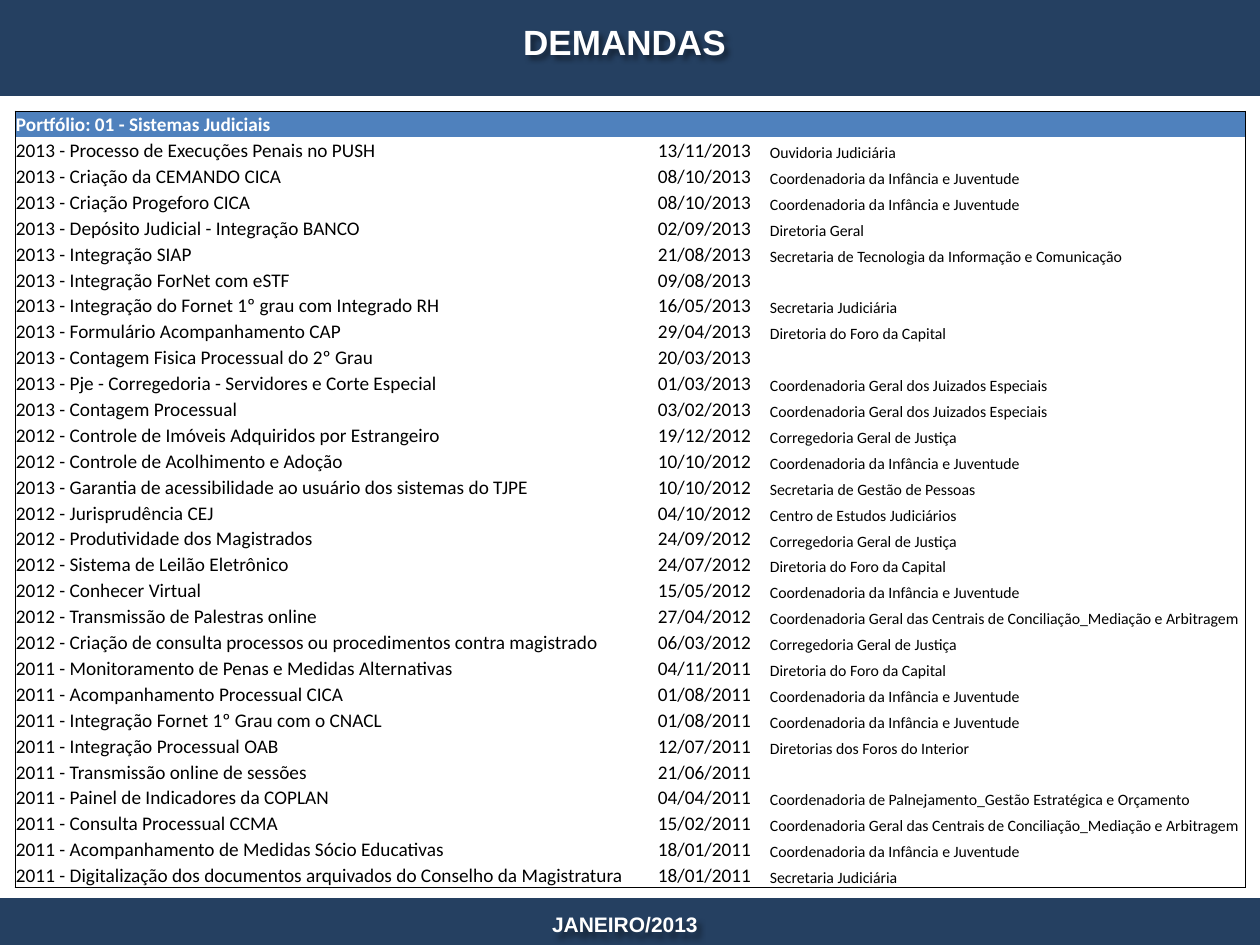
"""Build the DEMANDAS slide: a bordered table of judicial system requests."""
from lxml.etree import SubElement
from pptx import Presentation
from pptx.dml.color import RGBColor
from pptx.enum.shapes import MSO_SHAPE
from pptx.enum.text import MSO_ANCHOR, PP_ALIGN
from pptx.oxml import parse_xml
from pptx.oxml.ns import nsdecls, qn
from pptx.util import Pt

HEX = {"navy": "254061", "blue": "4F81BD", "white": "FFFFFF", "black": "000000"}
INF = "Coordenadoria da Infância e Juventude"
FORO = "Diretoria do Foro da Capital"
JUIZ = "Coordenadoria Geral dos Juizados Especiais"
CORR = "Corregedoria Geral de Justiça"
ARB = "Coordenadoria Geral das Centrais de Conciliação_Mediação e Arbitragem"
SEC = "Secretaria Judiciária"
ROWS = [
    ("Portfólio: 01 - Sistemas Judiciais", "", ""),
    ("2013 - Processo de Execuções Penais no PUSH", "13/11/2013", "Ouvidoria Judiciária"),
    ("2013 - Criação da CEMANDO CICA", "08/10/2013", INF),
    ("2013 - Criação Progeforo CICA", "08/10/2013", INF),
    ("2013 - Depósito Judicial - Integração BANCO", "02/09/2013", "Diretoria Geral"),
    ("2013 - Integração SIAP", "21/08/2013",
     "Secretaria de Tecnologia da Informação e Comunicação"),
    ("2013 - Integração ForNet com eSTF", "09/08/2013", ""),
    ("2013 - Integração do Fornet 1º grau com Integrado RH", "16/05/2013", SEC),
    ("2013 - Formulário Acompanhamento CAP", "29/04/2013", FORO),
    ("2013 - Contagem Fisica Processual do 2º Grau", "20/03/2013", ""),
    ("2013 - Pje - Corregedoria - Servidores e Corte Especial", "01/03/2013", JUIZ),
    ("2013 - Contagem Processual", "03/02/2013", JUIZ),
    ("2012 - Controle de Imóveis Adquiridos por Estrangeiro", "19/12/2012", CORR),
    ("2012 - Controle de Acolhimento e Adoção", "10/10/2012", INF),
    ("2013 - Garantia de acessibilidade ao usuário dos sistemas do TJPE", "10/10/2012",
     "Secretaria de Gestão de Pessoas"),
    ("2012 - Jurisprudência CEJ", "04/10/2012", "Centro de Estudos Judiciários"),
    ("2012 - Produtividade dos Magistrados", "24/09/2012", CORR),
    ("2012 - Sistema de Leilão Eletrônico", "24/07/2012", FORO),
    ("2012 - Conhecer Virtual", "15/05/2012", INF),
    ("2012 - Transmissão de Palestras online", "27/04/2012", ARB),
    ("2012 - Criação de consulta processos ou procedimentos contra magistrado",
     "06/03/2012", CORR),
    ("2011 - Monitoramento de Penas e Medidas Alternativas", "04/11/2011", FORO),
    ("2011 - Acompanhamento Processual CICA", "01/08/2011", INF),
    ("2011 - Integração Fornet 1º Grau com o CNACL", "01/08/2011", INF),
    ("2011 - Integração Processual OAB", "12/07/2011", "Diretorias dos Foros do Interior"),
    ("2011 - Transmissão online de sessões", "21/06/2011", ""),
    ("2011 - Painel de Indicadores da COPLAN", "04/04/2011",
     "Coordenadoria de Palnejamento_Gestão Estratégica e Orçamento"),
    ("2011 - Consulta Processual CCMA", "15/02/2011", ARB),
    ("2011 - Acompanhamento de Medidas Sócio Educativas", "18/01/2011", INF),
    ("2011 - Digitalização dos documentos arquivados do Conselho da Magistratura",
     "18/01/2011", SEC),
]
COLS = [(625, 11, PP_ALIGN.LEFT), (129, 11, PP_ALIGN.CENTER), (476, 9, PP_ALIGN.LEFT)]
BANDS = [(0, 898, 1260, 47), (0, -1, 1260, 97)]
TABLE = (15, 111, 1230, 777)
TITLE = ("DEMANDAS", (63, 6, 1123, 70), 20)
FOOT = ("JANEIRO/2013", (-5, 900, 1260, 49), 12)


def px(n):
    return round(n * 914400 / 126)


def color(name):
    return RGBColor.from_string(HEX[name])


def write(para, text, size, face, tint, bold, align):
    para.alignment = align
    run = para.add_run()
    run.text = text
    font = run.font
    font.size, font.name, font.bold = Pt(size), face, bold
    font.color.rgb = color(tint)


def caption(shape, text, box, size):
    shape.left, shape.top, shape.width, shape.height = map(px, box)
    frame = shape.text_frame
    frame.word_wrap = True
    frame.vertical_anchor = MSO_ANCHOR.MIDDLE
    write(frame.paragraphs[0], text, size, "Arial", "white", True, PP_ALIGN.CENTER)
    shape._element.spPr.append(parse_xml(
        f'<a:effectLst {nsdecls("a")}><a:outerShdw blurRad="38100" dist="38100" '
        'dir="2700000" algn="tl"><a:srgbClr val="000000"><a:alpha val="43000"/>'
        '</a:srgbClr></a:outerShdw></a:effectLst>'))


def border(cell, edges):
    props = cell._tc.get_or_add_tcPr()
    for side in "LRTB":
        line = SubElement(props, qn(f"a:ln{side}"), w=str(Pt(0.5)))
        if side in edges:
            fill = SubElement(line, qn("a:solidFill"))
            SubElement(fill, qn("a:srgbClr"), val=HEX["black"])
        else:
            SubElement(line, qn("a:noFill"))


def fill_cell(cell, text, size, align, head):
    cell.vertical_anchor = MSO_ANCHOR.BOTTOM
    cell.margin_left = cell.margin_right = cell.margin_top = px(1)
    cell.margin_bottom = 0
    if head:
        cell.fill.solid()
        cell.fill.fore_color.rgb = color("blue")
    else:
        cell.fill.background()
    para = cell.text_frame.paragraphs[0]
    if text:
        write(para, text, size, "Calibri", "white" if head else "black", head, align)
    else:
        SubElement(para._p, qn("a:endParaRPr"), sz=str(size * 100))


def add_grid(slide):
    grid = slide.shapes.add_table(len(ROWS), len(COLS), *map(px, TABLE)).table
    grid.first_row = grid.horz_banding = False
    for col, (wide, _, _) in zip(grid.columns, COLS):
        col.width = px(wide)
    for r, row in enumerate(ROWS):
        grid.rows[r].height = px(TABLE[3] / len(ROWS))
        for c, (text, (_, size, align)) in enumerate(zip(row, COLS)):
            sides = {"L": c == 0, "R": c == len(COLS) - 1,
                     "T": r == 0, "B": r == len(ROWS) - 1}
            cell = grid.cell(r, c)
            border(cell, [side for side, on in sides.items() if on])
            fill_cell(cell, text, size, align, r == 0)


def main():
    deck = Presentation()
    deck.slide_width, deck.slide_height = px(1260), px(945)
    slide = deck.slides.add_slide(deck.slide_layouts[5])
    shapes = slide.shapes
    for box in BANDS:
        band = shapes.add_shape(MSO_SHAPE.RECTANGLE, *map(px, box))
        band.shadow.inherit = False
        band.fill.solid()
        band.fill.fore_color.rgb = color("navy")
        band.line.fill.background()
    caption(shapes.add_textbox(0, 0, 0, 0), *FOOT)
    title = shapes.title
    shapes._spTree.append(title._element)
    caption(title, *TITLE)
    add_grid(slide)
    deck.save("out.pptx")


if __name__ == "__main__":
    main()
